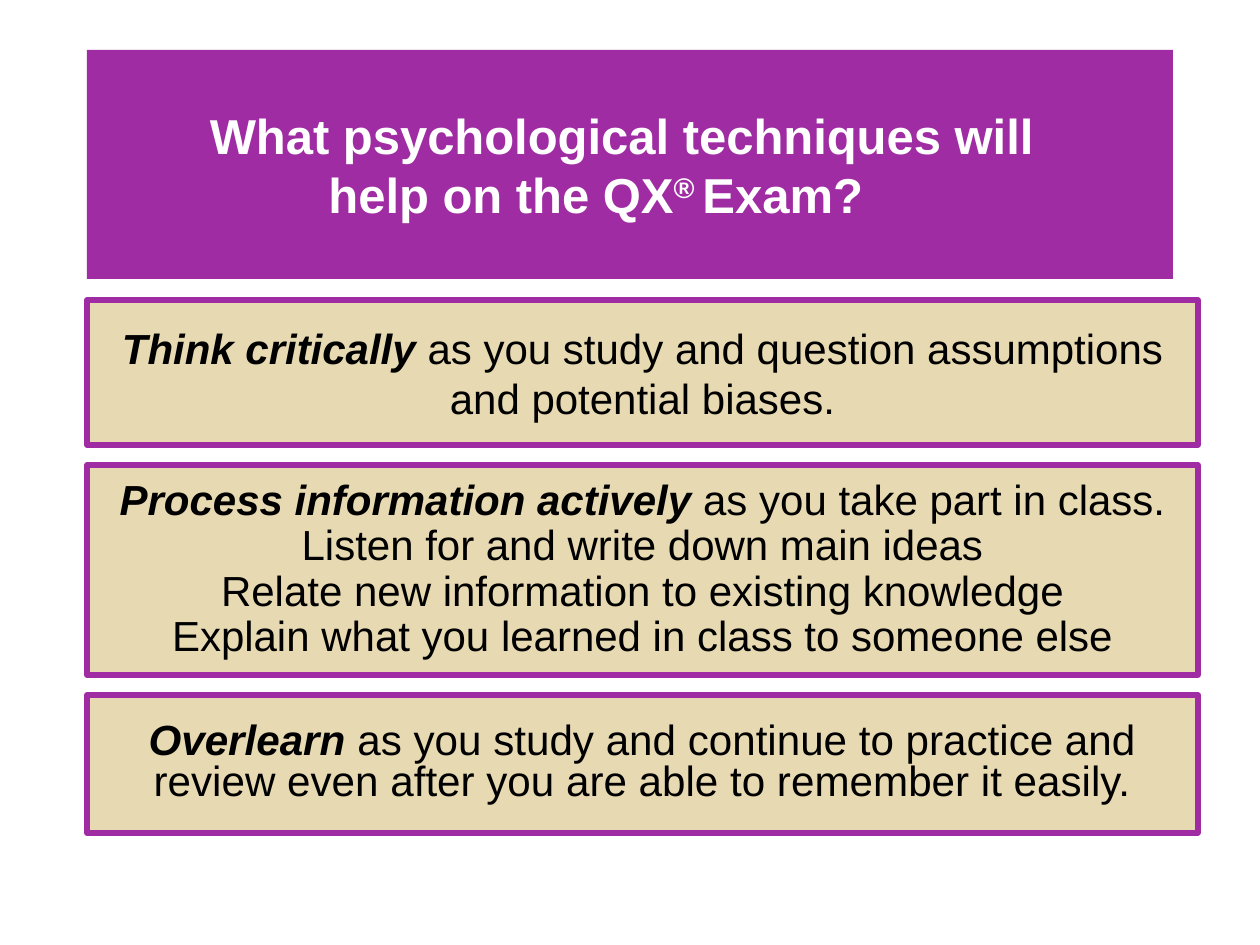
from pptx import Presentation
from pptx import util as u
from pptx.dml.color import RGBColor
from pptx.enum import shapes, text

COLORS = {"purple": "A02CA3", "sand": "E7D9B1", "white": "FFFFFF", "black": "000000"}
PX_PER_INCH = 126
LEFT, PANEL_WIDTH, FIRST_TOP, GAP = 87, 1111, 300, 20

TITLE = [
    (52, [("What psychological techniques will", {})]),
    (0, [("help on the QX", {}), ("® ", {"baseline": "30000"}), ("Exam?", {})]),
]
EMPHASIS = {"bold": True, "italic": True}
PANELS = [
    (145, 24, 1.0, [[
        ("Think critically ", EMPHASIS),
        ("as you study and question assumptions and potential biases.", {}),
    ]]),
    (210, 24, 0.9, [
        [("Process information actively ", EMPHASIS),
         ("as you take part in class. Listen for and write down main ideas", {})],
        [("Relate new information to existing knowledge", {})],
        [("Explain what you learned in class to someone else", {})],
    ]),
    (138, 24.1, 0.8, [[
        ("Overlearn ", EMPHASIS),
        ("as you study and continue to practice and review even after "
         "you are able to remember it easily.", {}),
    ]]),
]


def px(length):
    return u.Emu(round(length * 914400 / PX_PER_INCH))


def rgb(name):
    return RGBColor.from_string(COLORS[name])


def set_all(target, values):
    for key, value in values.items():
        setattr(target, key, value)


def add_block(slide, box, fill):
    block = slide.shapes.add_shape(shapes.MSO_SHAPE.RECTANGLE, *map(px, box))
    block.shadow.inherit = False
    block.fill.solid()
    block.fill.fore_color.rgb = rgb(fill)
    set_all(block.text_frame, {
        "word_wrap": True,
        "vertical_anchor": text.MSO_ANCHOR.MIDDLE,
    })
    return block


def write_line(frame, index, runs, size, color, spacing):
    line = frame.add_paragraph() if index else frame.paragraphs[0]
    set_all(line, {"alignment": text.PP_ALIGN.CENTER, "line_spacing": spacing})
    for words, style in runs:
        run = line.add_run()
        run.text = words
        font = {"name": "Arial", "size": u.Pt(size), "bold": False, "italic": False}
        extra = dict(style)
        baseline = extra.pop("baseline", None)
        set_all(run.font, {**font, **extra})
        run.font.color.rgb = rgb(color)
        if baseline:
            run.font._element.set("baseline", baseline)
    return line


def add_title(slide, box):
    banner = add_block(slide, box, "purple")
    banner.line.fill.background()
    banner.text_frame.margin_right = px(81)
    for index, (indent, runs) in enumerate(TITLE):
        bold_runs = [(words, {"bold": True, **style}) for words, style in runs]
        line = write_line(banner.text_frame, index, bold_runs, 28, "white", 1.0)
        line._p.get_or_add_pPr().set("marL", str(px(indent)))


def add_panel(slide, box, size, spacing, lines):
    panel = add_block(slide, box, "sand")
    panel.line.color.rgb = rgb("purple")
    panel.line.width = u.Pt(3)
    for index, runs in enumerate(lines):
        write_line(panel.text_frame, index, runs, size, "black", spacing)


def main():
    deck = Presentation()
    set_all(deck, {"slide_width": px(1260), "slide_height": px(945)})
    slide = deck.slides.add_slide(deck.slide_layouts[6])
    add_title(slide, (LEFT, 50, 1086, 229))
    top = FIRST_TOP
    for height, size, spacing, lines in PANELS:
        add_panel(slide, (LEFT, top, PANEL_WIDTH, height), size, spacing, lines)
        top += height + GAP
    deck.save("out.pptx")


if __name__ == "__main__":
    main()
